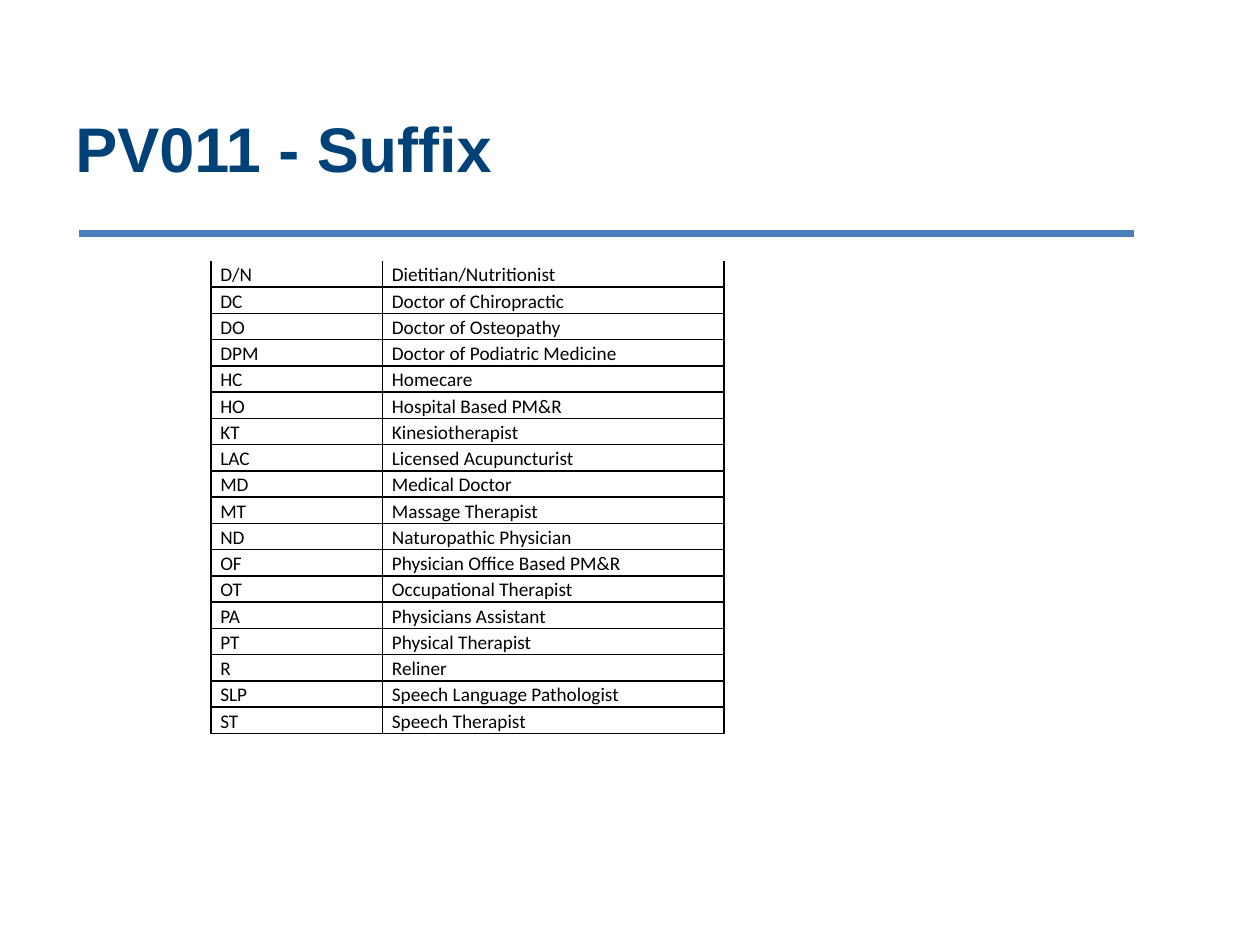
from dataclasses import dataclass

from lxml import etree
from pptx import Presentation
from pptx.dml.color import RGBColor
from pptx.enum import shapes, text
from pptx.oxml import ns
from pptx.util import Cm, Pt


@dataclass(frozen=True)
class Theme:
    title_color: RGBColor = RGBColor(0x00, 0x41, 0x78)
    rule_color: RGBColor = RGBColor(0x4B, 0x7E, 0xBC)
    table_color: RGBColor = RGBColor(0x00, 0x00, 0x00)
    title_font: str = "Arial"
    table_font: str = "Calibri"
    title_size: Pt = Pt(36)
    table_size: Pt = Pt(11)
    rule_width: Pt = Pt(4)
    border_width: Pt = Pt(1)


theme = Theme()

SUFFIXES = [
    ("D/N", "Dietitian/Nutritionist"),
    ("DC", "Doctor of Chiropractic"),
    ("DO", "Doctor of Osteopathy"),
    ("DPM", "Doctor of Podiatric Medicine"),
    ("HC", "Homecare"),
    ("HO", "Hospital Based PM&R"),
    ("KT", "Kinesiotherapist"),
    ("LAC", "Licensed Acupuncturist"),
    ("MD", "Medical Doctor"),
    ("MT", "Massage Therapist"),
    ("ND", "Naturopathic Physician"),
    ("OF", "Physician Office Based PM&R"),
    ("OT", "Occupational Therapist"),
    ("PA", "Physicians Assistant"),
    ("PT", "Physical Therapist"),
    ("R", "Reliner"),
    ("SLP", "Speech Language Pathologist"),
    ("ST", "Speech Therapist"),
]


def set_borders(cell, open_top):
    """Draw the four cell borders, leaving the top one out if open_top."""
    properties = cell._tc.get_or_add_tcPr()
    for side in ("lnL", "lnR", "lnT", "lnB"):
        line = etree.SubElement(properties, ns.qn(f"a:{side}"), w=str(theme.border_width))
        if side == "lnT" and open_top:
            etree.SubElement(line, ns.qn("a:noFill"))
        else:
            fill = etree.SubElement(line, ns.qn("a:solidFill"))
            etree.SubElement(fill, ns.qn("a:srgbClr"), val=str(theme.table_color))


deck = Presentation()
deck.slide_width, deck.slide_height = Cm(25.4), Cm(19.05)
page = deck.slides.add_slide(deck.slide_layouts[6])

# Rule under the title
rule = page.shapes.add_connector(
    shapes.MSO_CONNECTOR.STRAIGHT, Cm(1.6), Cm(4.7), Cm(22.86), Cm(4.7))
rule.line.color.rgb = theme.rule_color
rule.line.width = theme.rule_width
etree.SubElement(rule._element.spPr, ns.qn("a:effectLst"))

# Title
title = page.shapes.add_textbox(Cm(1.27), Cm(1.57), Cm(21.59), Cm(2.82))
title.text_frame.word_wrap = True
title.text_frame.vertical_anchor = text.MSO_ANCHOR.MIDDLE
title.text_frame.text = "PV011 - Suffix"
span = title.text_frame.paragraphs[0].runs[0]
span.font.name = theme.title_font
span.font.size = theme.title_size
span.font.bold = True
span.font.color.rgb = theme.title_color

# Suffix table
table = page.shapes.add_table(
    len(SUFFIXES), 2, Cm(4.25), Cm(5.26), Cm(10.34), Cm(9.53)).table
table.first_row = False
table.horz_banding = False
table.columns[0].width = Cm(3.46)
table.columns[1].width = Cm(6.88)

for row, entry in enumerate(SUFFIXES):
    for column, wording in enumerate(entry):
        cell = table.cell(row, column)
        cell.margin_left = cell.margin_right = Cm(0.19)
        cell.margin_top = cell.margin_bottom = 0
        cell.vertical_anchor = text.MSO_ANCHOR.BOTTOM
        set_borders(cell, open_top=row == 0)
        cell.fill.background()
        cell.text_frame.text = wording
        span = cell.text_frame.paragraphs[0].runs[0]
        span.font.name = theme.table_font
        span.font.size = theme.table_size
        span.font.color.rgb = theme.table_color

deck.save("out.pptx")
